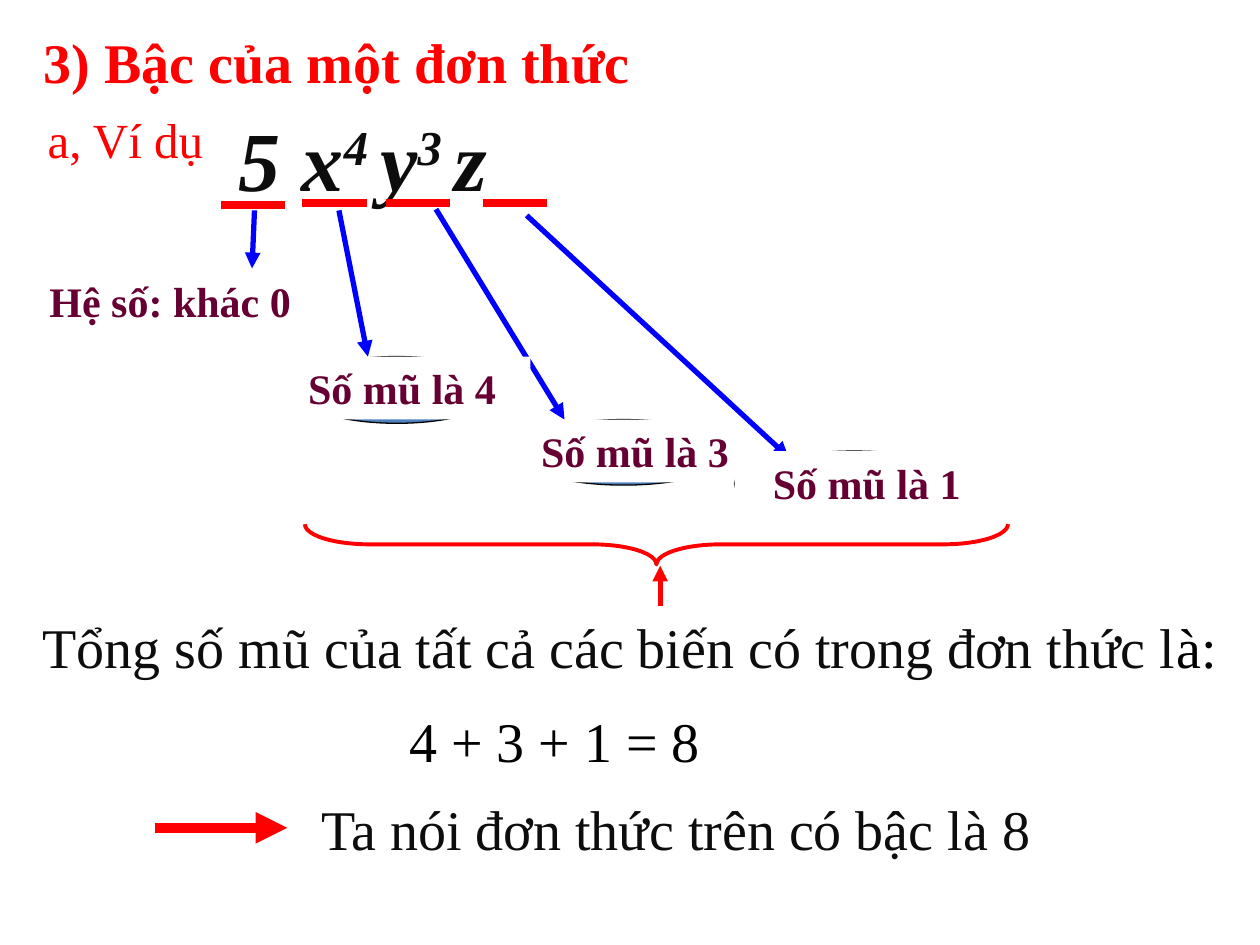
from lxml.etree import SubElement
from pptx import Presentation
from pptx.dml.color import RGBColor
from pptx.enum.shapes import MSO_CONNECTOR, MSO_SHAPE
from pptx.enum.text import MSO_ANCHOR, PP_ALIGN
from pptx.oxml.ns import qn
from pptx.util import Inches, Pt

COLORS = {"red": "FF0000", "blue": "0000FF", "plum": "660033", "ink": "0D0D0D",
          "steel": "4F81BD", "black": "000000", "white": "FFFFFF"}
FONT = "Times New Roman"
COLS, ROWS = 100, 75
CELL = Inches(10) / COLS


def cells(*spans):
    return [round(span * CELL) for span in spans]


def inner(box, left, top, wide, high):
    """Turn a place inside a region into a place on the slide grid."""
    return box[0] + left, box[1] + top, wide, high


def tint(name):
    return RGBColor.from_string(COLORS[name])


def add_text(slide, box, parts, size=32, color="ink", bold=False, italic=False,
             center=False, fill=None, indent=0.0, drop=0.0):
    """parts is a string or a list of (words, format) pairs."""
    shape = slide.shapes.add_textbox(*cells(*box))
    if fill:
        shape.fill.solid()
        shape.fill.fore_color.rgb = tint(fill)
    frame = shape.text_frame
    frame.word_wrap = True
    frame.vertical_anchor = MSO_ANCHOR.TOP
    frame.margin_left, frame.margin_top = cells(1 + indent, 0.5 + drop)
    para = frame.paragraphs[0]
    para.alignment = PP_ALIGN.CENTER if center else PP_ALIGN.LEFT
    for words, form in [(parts, {})] if isinstance(parts, str) else parts:
        run = para.add_run()
        run.text = words
        font = run.font
        font.name, font.size = FONT, Pt(size)
        font.bold, font.italic = bold, italic
        font.color.rgb = tint(form.get("color", color))
        if form.get("power"):
            run._r.get_or_add_rPr().set("baseline", "30000")


def add_line(slide, box, start, end, color, width, arrow=False):
    ends = [box[0] + start[0], box[1] + start[1], box[0] + end[0], box[1] + end[1]]
    link = slide.shapes.add_connector(MSO_CONNECTOR.STRAIGHT, *cells(*ends))
    link.line.color.rgb = tint(color)
    link.line.width = Pt(width)
    if arrow:
        SubElement(link.line._get_or_add_ln(), qn("a:tailEnd"), type="triangle")
    SubElement(link._element.spPr, qn("a:effectLst"))


def add_oval(slide, box):
    oval = slide.shapes.add_shape(MSO_SHAPE.OVAL, *cells(*box))
    oval.shadow.inherit = False
    oval.fill.solid()
    oval.fill.fore_color.rgb = tint("steel")
    oval.line.color.rgb = tint("black")
    oval.line.width = Pt(0.75)


def add_label(slide, box, words, indent=0.0):
    add_text(slide, box, words, size=24, color="plum", bold=True, center=True,
             fill="white", indent=indent)


def draw_head(slide, box):
    add_text(slide, inner(box, 0, 0, 72.1, 6.3), "3) Bậc của một đơn thức",
             color="red", bold=True)
    add_text(slide, inner(box, 0.3, 6.5, 16.8, 5.7), "a, Ví dụ", size=28,
             color="red", fill="white")


def draw_term(slide, box):
    # Monomial with a raised power after each variable
    power = {"power": True}
    parts = [("5 x", {}), ("4 ", power), ("y", {}), ("3 ", power), ("z", {})]
    add_text(slide, inner(box, 0, 0, 33.2, 10), parts, size=48, bold=True,
             italic=True, indent=3.75, drop=0.7)
    # One underline below each factor
    for left, top in ((3.3, 8.95), (9.8, 8.8), (16.4, 8.8), (24.1, 8.8)):
        add_line(slide, box, (left, top), (left + 5.15, top), "red", 4.5)


def draw_powers(slide, box):
    # Arrow ends, oval, label box, label words, label indent
    powers = [
        ((26.9, 0.1), (29.2, 11.7), (23.3, 11.7, 16.4, 5.3),
         (19.2, 11.7, 22.9, 5), "Số mũ là 4", 2.5),
        ((34.6, 0), (44.8, 16.7), (40.8, 16.7, 17.4, 5.2),
         (40, 16.7, 20, 5), "Số mũ là 3", 0.8),
        ((41.8, 0.5), (62.6, 19.7), (58.3, 19.2, 19, 5.2),
         (58.3, 19.2, 21, 11), "Số mũ là 1", 0),
    ]
    # The last arrow passes over the earlier labels
    for group in (powers[:2], powers[2:]):
        for start, end, oval, *_ in group:
            add_line(slide, box, start, end, "blue", 3, arrow=True)
            add_oval(slide, inner(box, *oval))
        for *_, place, words, indent in group:
            add_label(slide, inner(box, *place), words, indent)
    # Coefficient
    add_line(slide, box, (20.2, 0.1), (20, 4.7), "blue", 3, arrow=True)
    add_label(slide, inner(box, -0.4, 4.8, 25.3, 5), "Hệ số: khác 0", 2.5)


def draw_sum(slide, box):
    # Brace turned to open upward
    brace = slide.shapes.add_shape(
        MSO_SHAPE.LEFT_BRACE, *cells(*inner(box, 49.1, -26.5, 3.2, 55.8)))
    brace.rotation = 270
    brace.adjustments[0] = 1.6
    brace.shadow.inherit = False
    brace.fill.background()
    brace.line.color.rgb = tint("red")
    brace.line.width = Pt(2.25)
    add_line(slide, box, (51, 6.3), (51, 3.1), "red", 3, arrow=True)
    # Sum of the powers
    add_text(slide, inner(box, 0, 6.3, 97.2, 6.4),
             [("Tổng số mũ của tất cả các biến có trong đơn thức l", {}),
              ("à:", {"color": "black"})], center=True)
    add_text(slide, inner(box, 30.1, 13.8, 36.3, 6.4), "4 + 3 + 1 = 8",
             color="black")


def draw_end(slide, box):
    add_line(slide, box, (0, 3.1), (10.5, 3.1), "red", 6, arrow=True)
    add_text(slide, inner(box, 12.2, 0, 75.5, 6.4),
             "Ta nói đơn thức trên có bậc là 8")


def main():
    deck = Presentation()
    deck.slide_width, deck.slide_height = cells(COLS, ROWS)
    slide = deck.slides.add_slide(deck.slide_layouts[6])
    draw_head(slide, (2.5, 1.7))
    draw_term(slide, (14.2, 7.3))
    draw_powers(slide, (0, 16.6))
    draw_sum(slide, (1.4, 41.8))
    draw_end(slide, (12.3, 62.6))
    deck.save("out.pptx")


if __name__ == "__main__":
    main()
